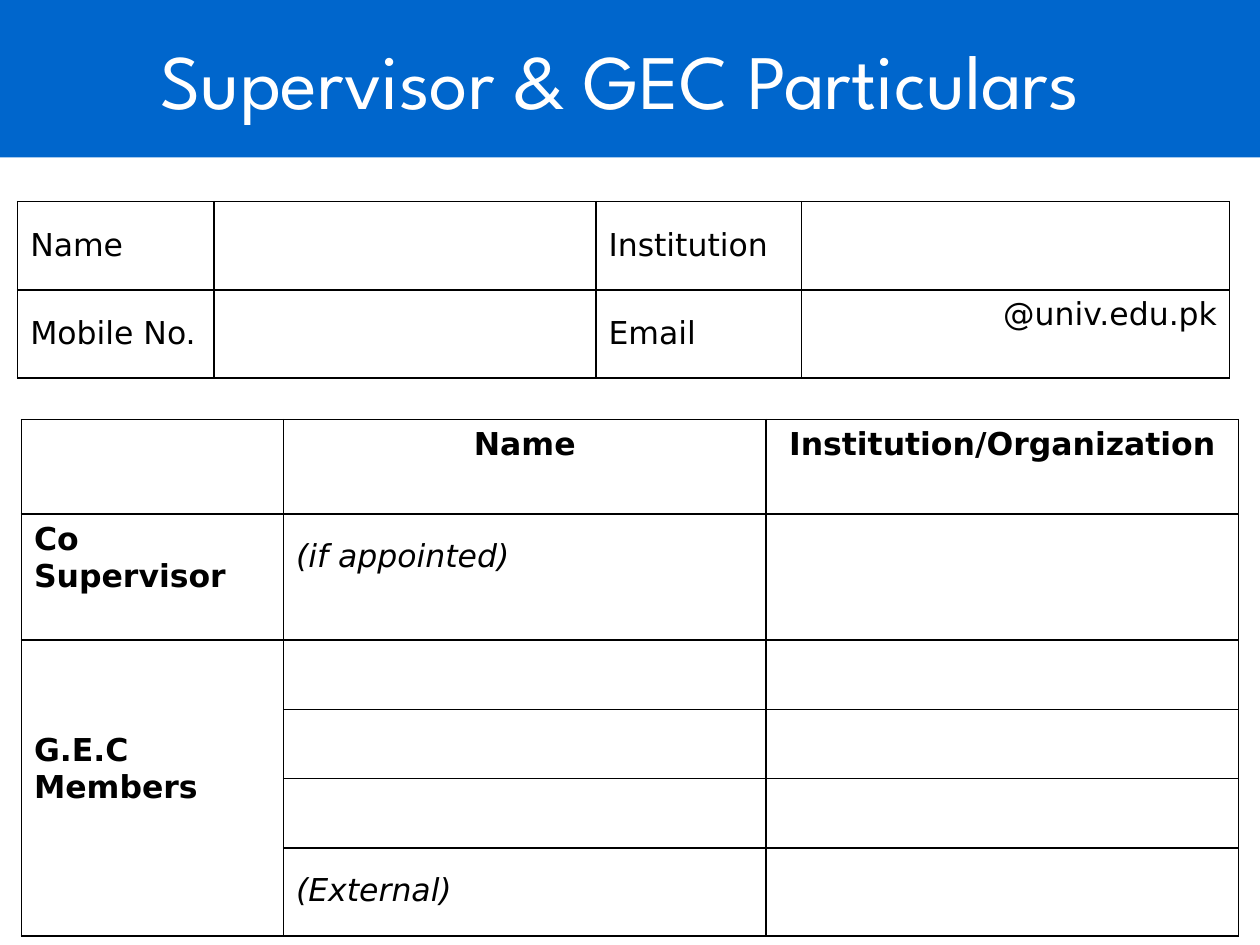
from dataclasses import dataclass

from lxml import etree
from pptx import Presentation
from pptx.dml.color import RGBColor
from pptx.enum.shapes import MSO_SHAPE
from pptx.enum.text import MSO_ANCHOR, PP_ALIGN
from pptx.oxml.ns import qn
from pptx.util import Inches, Pt

RECTANGLE = MSO_SHAPE.RECTANGLE
TOP, MIDDLE = MSO_ANCHOR.TOP, MSO_ANCHOR.MIDDLE
LEFT, CENTER, RIGHT = PP_ALIGN.LEFT, PP_ALIGN.CENTER, PP_ALIGN.RIGHT


@dataclass(frozen=True)
class Theme:
    banner: str = "0066CC"
    light: str = "FFFFFF"
    ink: str = "000000"
    title_font: str = "League Spartan"
    body_font: str = "DejaVu Sans"
    title_size: int = 44
    body_size: int = 18
    border_width: int = 1


THEME = Theme()


def style_text(frame, font, size, color, align=LEFT, bold=False, italic=False):
    for para in frame.paragraphs:
        para.alignment = align
        for span in para.runs:
            span.font.name = font
            span.font.size = Pt(size)
            span.font.color.rgb = RGBColor.from_string(color)
            span.font.bold = bold
            span.font.italic = italic


def add_banner(page, text):
    banner = page.shapes.add_shape(RECTANGLE, 0, 0, Inches(10), Inches(1.25))
    banner.shadow.inherit = False
    banner.fill.solid()
    banner.fill.fore_color.rgb = RGBColor.from_string(THEME.banner)
    banner.line.fill.background()
    frame = banner.text_frame
    frame.word_wrap = True
    frame.vertical_anchor = MIDDLE
    frame.text = text
    style_text(frame, THEME.title_font, THEME.title_size, THEME.light, CENTER)


def draw_borders(cell):
    properties = cell._tc.get_or_add_tcPr()
    for index, side in enumerate(("lnL", "lnR", "lnT", "lnB")):
        line = etree.Element(qn(f"a:{side}"), w=str(Pt(THEME.border_width)))
        fill = etree.SubElement(line, qn("a:solidFill"))
        etree.SubElement(fill, qn("a:srgbClr"), val=THEME.ink)
        properties.insert(index, line)


def add_grid(page, left, top, widths, heights):
    frame = page.shapes.add_table(
        len(heights), len(widths), Inches(left), Inches(top),
        Inches(sum(widths)), Inches(sum(heights)))
    table = frame.table
    table.first_row = table.horz_banding = False
    for column, width in zip(table.columns, widths):
        column.width = Inches(width)
    for row, height in zip(table.rows, heights):
        row.height = Inches(height)
    for cell in table.iter_cells():
        cell.fill.background()
        draw_borders(cell)
    return table


def write_cell(cell, text, anchor=MIDDLE, bottom=0.05, spacing=None, **style):
    cell.text = text
    cell.vertical_anchor = anchor
    cell.margin_bottom = Inches(bottom)
    if spacing:
        cell.text_frame.paragraphs[0].line_spacing = spacing
    style_text(cell.text_frame, THEME.body_font, THEME.body_size, THEME.ink, **style)


def add_supervisor_table(page):
    table = add_grid(page, 0.14, 1.6, [1.56, 3.03, 1.63, 3.4], [0.7, 0.7])
    labels = [("Name", "Institution"), ("Mobile No.", "Email")]
    for row, pair in enumerate(labels):
        for column, label in zip((0, 2), pair):
            write_cell(table.cell(row, column), label)
    write_cell(table.cell(1, 3), "@univ.edu.pk", bottom=0.35, align=RIGHT)


def add_committee_table(page):
    table = add_grid(page, 0.17, 3.33, [2.08, 3.83, 3.75],
                     [0.75, 1, 0.55, 0.55, 0.55, 0.7])
    table.cell(2, 0).merge(table.cell(5, 0))
    for column, heading in enumerate(("Name", "Institution/Organization"), 1):
        write_cell(table.cell(0, column), heading, TOP, align=CENTER, bold=True)
    for row, role in enumerate(("Co Supervisor", "G.E.C Members"), 1):
        write_cell(table.cell(row, 0), role, bottom=0.35, bold=True)
    for row, note in ((1, "(if appointed)"), (5, "(External)")):
        write_cell(table.cell(row, 1), note, TOP, spacing=1.5, italic=True)
    for row, column in ((0, 0), (1, 0), (2, 0), (2, 1), (2, 2)):
        fill = table.cell(row, column).fill
        fill.solid()
        fill.fore_color.rgb = RGBColor.from_string(THEME.light)


def main():
    deck = Presentation()
    deck.slide_width, deck.slide_height = Inches(10), Inches(7.5)
    page = deck.slides.add_slide(deck.slide_layouts[6])
    add_banner(page, "Supervisor & GEC Particulars ")
    add_supervisor_table(page)
    add_committee_table(page)
    deck.save("out.pptx")


if __name__ == "__main__":
    main()
